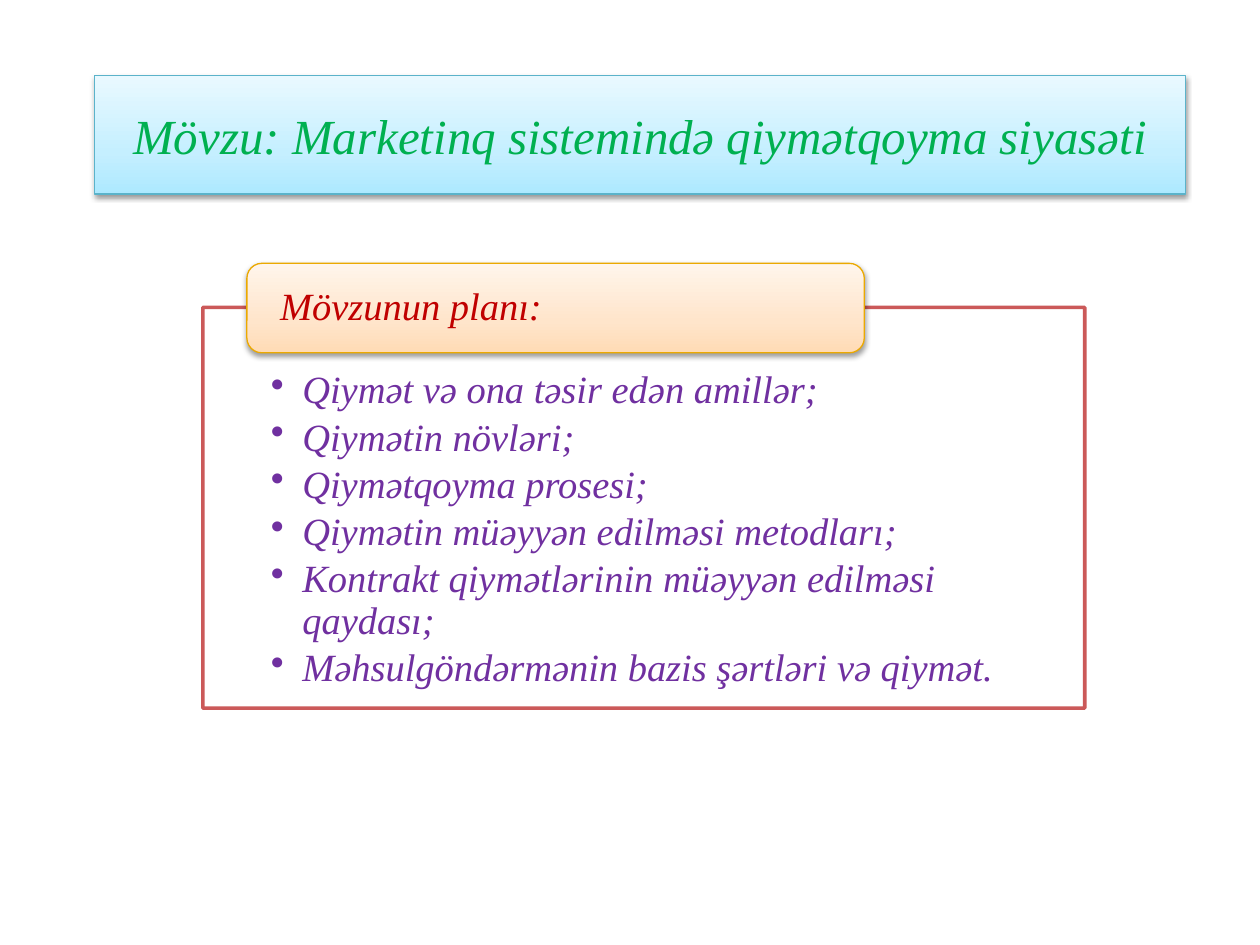
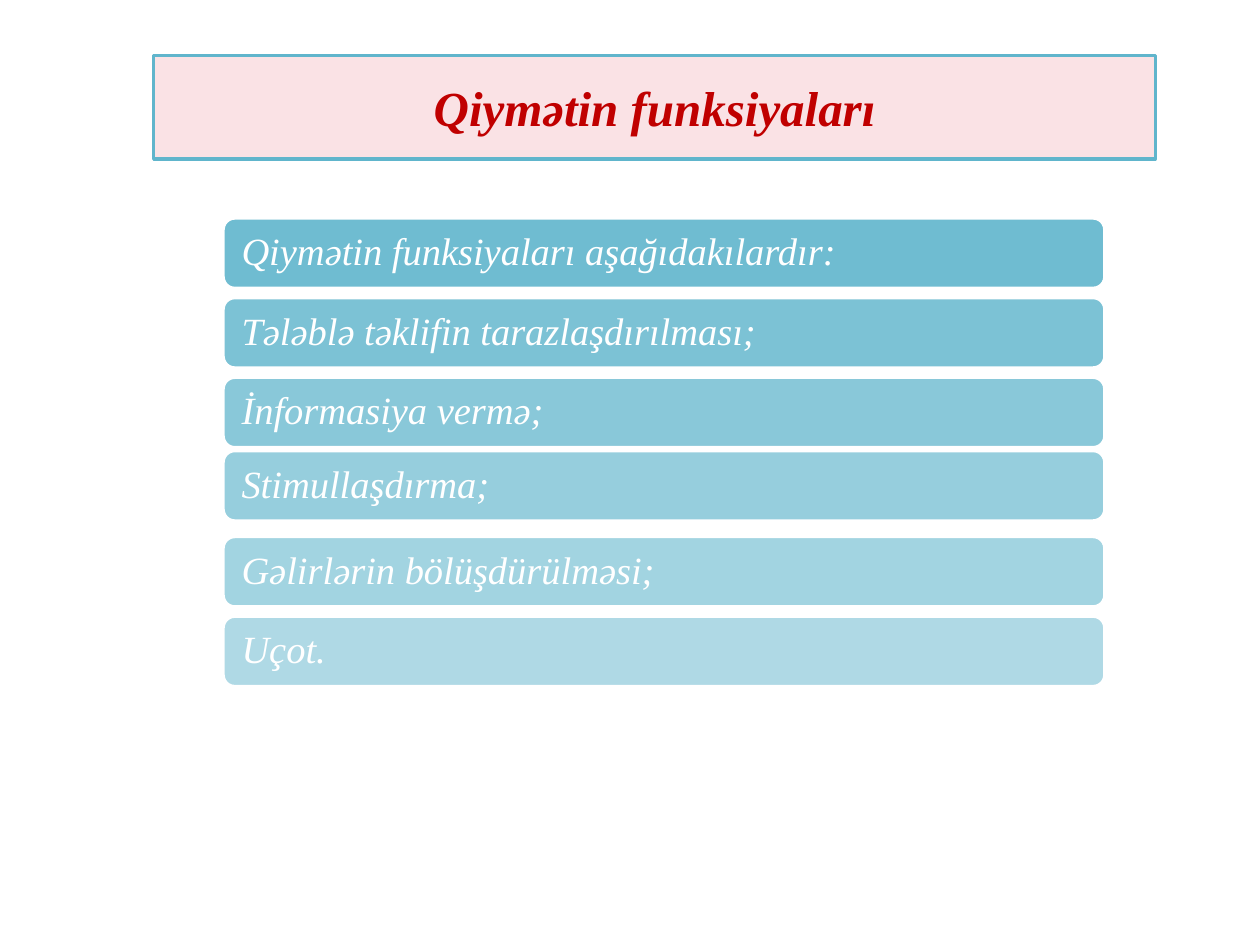
from copy import deepcopy

from lxml.etree import SubElement
from pptx import Presentation
from pptx.dml.color import RGBColor
from pptx.enum.shapes import MSO_SHAPE as Shape
from pptx.enum.text import MSO_ANCHOR as Anchor, MSO_AUTO_SIZE as AutoSize, PP_ALIGN as Align
from pptx.oxml.ns import qn
from pptx.util import Inches, Pt

FONT = "Times New Roman"
WHITE = "FFFFFF"
RED = "C00000"
GREEN = "00B050"
PURPLE = "7030A0"
TEAL = "60B5CC"
TITLE_SIZE = 28
BODY_SIZE = 22

PLAN = [
    "Qiymət və ona təsir edən amillər;",
    "Qiymətin növləri;",
    "Qiymətqoyma prosesi;",
    "Qiymətin müəyyən edilməsi metodları;",
    "Kontrakt qiymətlərinin müəyyən edilməsi qaydası;",
    "Məhsulgöndərmənin bazis şərtləri və qiymət.",
]
FUNCTIONS = [
    "Qiymətin funksiyaları aşağıdakılardır:",
    "Tələblə təklifin tarazlaşdırılması;",
    "İnformasiya vermə;",
    "Stimullaşdırma;",
    "Gəlirlərin bölüşdürülməsi;",
    "Uçot.",
]


def rgb(value):
    """Turn a hex string into a colour."""
    return RGBColor.from_string(value)


def set_line(shape, color, width):
    """Outline a shape."""
    shape.line.color.rgb = rgb(color)
    shape.line.width = Pt(width)


def set_solid(shape, color):
    """Fill a shape with one colour."""
    shape.fill.solid()
    shape.fill.fore_color.rgb = rgb(color)


def set_gradient(shape, bottom, middle, top):
    """Fill a shape with three colours rising from its bottom edge."""
    shape.fill.gradient()
    shape.fill.gradient_angle = 90
    stops = shape._element.spPr.find(".//" + qn("a:gsLst"))
    stops.insert(1, deepcopy(stops[0]))
    for stop, position, color in zip(shape.fill.gradient_stops, (0, 0.35, 1), (bottom, middle, top)):
        stop.position = position
        stop.color.rgb = rgb(color)


def set_opacity(fill_parent, percent):
    """Make the solid fill directly under an XML element translucent."""
    color = fill_parent.find(qn("a:solidFill")).find(qn("a:srgbClr"))
    SubElement(color, qn("a:alpha"), val=str(percent * 1000))


def add_shadow(shape):
    """Give a shape a soft shadow below it."""
    shape.shadow.inherit = False
    effects = shape._element.spPr.find(qn("a:effectLst"))
    shadow = SubElement(effects, qn("a:outerShdw"), blurRad=str(Pt(3.1)), dist=str(Pt(1.6)),
                        dir="5400000", rotWithShape="0")
    color = SubElement(shadow, qn("a:srgbClr"), val="000000")
    SubElement(color, qn("a:alpha"), val="38000")


def write(shape, lines, size, color, align=Align.LEFT, anchor=Anchor.MIDDLE, bold=False):
    """Write italic paragraphs into a shape."""
    frame = shape.text_frame
    frame.text = "\n".join(lines)
    frame.word_wrap = True
    frame.auto_size = AutoSize.NONE
    frame.vertical_anchor = anchor
    for paragraph in frame.paragraphs:
        paragraph.alignment = align
        for run in paragraph.runs:
            font = run.font
            font.name, font.size = FONT, Pt(size)
            font.italic, font.bold = True, bold
            font.color.rgb = rgb(color)


def set_insets(shape, side, top=0, bottom=0):
    """Set the inner margins of a shape."""
    frame = shape.text_frame
    frame.margin_left = frame.margin_right = Inches(side)
    frame.margin_top, frame.margin_bottom = Inches(top), Inches(bottom)


def add_bullets(shape):
    """Bullet the paragraphs of a shape and space them."""
    for paragraph in shape.text_frame.paragraphs:
        paragraph.line_spacing = 0.9
        paragraph.space_after = Pt(3.3)
        properties = paragraph._p.get_or_add_pPr()
        properties.set("marL", str(Inches(0.25)))
        properties.set("indent", str(-Inches(0.25)))
        SubElement(properties, qn("a:buChar"), char="•")


def add_box(slide, kind, left, top, width, height):
    """Add a preset shape without a shadow."""
    shape = slide.shapes.add_shape(kind, Inches(left), Inches(top), Inches(width), Inches(height))
    shape.shadow.inherit = False
    return shape


def add_titled_slide(presentation, text, color, left, top, width, height, bold=False):
    """Add a slide and place its title; return both."""
    slide = presentation.slides.add_slide(presentation.slide_layouts[5])
    title = slide.shapes.title
    title.left, title.top = Inches(left), Inches(top)
    title.width, title.height = Inches(width), Inches(height)
    write(title, [text], TITLE_SIZE, color, Align.CENTER, bold=bold)
    return slide, title


def add_plan(slide):
    """Add the framed plan with its heading tab."""
    frame = add_box(slide, Shape.RECTANGLE, 1.61, 2.44, 7, 3.18)
    set_solid(frame, WHITE)
    set_line(frame, "C64847", 2)
    properties = frame._element.spPr
    set_opacity(properties, 90)
    set_opacity(properties.find(qn("a:ln")), 90)
    write(frame, PLAN, BODY_SIZE, PURPLE, anchor=Anchor.TOP)
    set_insets(frame, 0.54, 0.5, 0.17)
    add_bullets(frame)

    heading = add_box(slide, Shape.ROUNDED_RECTANGLE, 1.96, 2.09, 4.9, 0.71)
    set_gradient(heading, "FFDBB5", "FFE5CB", "FFF5EB")
    set_line(heading, "EBA900", 0.75)
    add_shadow(heading)
    write(heading, ["Mövzunun planı:"], BODY_SIZE, RED)
    set_insets(heading, 0.23)
    heading.text_frame.paragraphs[0].line_spacing = 0.9


def add_function_bars(slide):
    """Stack the function bars, each paler than the one above."""
    first_top, last_top = 1.73, 4.89
    pitch = (last_top - first_top) / (len(FUNCTIONS) - 1)
    nudges = {3: -0.05}
    for index, text in enumerate(FUNCTIONS):
        top = first_top + index * pitch + nudges.get(index, 0)
        bar = add_box(slide, Shape.ROUNDED_RECTANGLE, 1.77, top, 7, 0.56)
        set_solid(bar, TEAL)
        set_opacity(bar._element.spPr, 90 - 8 * index)
        set_line(bar, WHITE, 2)
        write(bar, [text], BODY_SIZE, WHITE)
        set_insets(bar, 0.12)
        bar.text_frame.paragraphs[0].line_spacing = 0.9


def main():
    """Build the presentation."""
    presentation = Presentation()
    presentation.slide_width, presentation.slide_height = Inches(10), Inches(7.5)

    slide, title = add_titled_slide(presentation, "Mövzu: Marketinq sistemində qiymətqoyma siyasəti",
                                    GREEN, 0.75, 0.6, 8.66, 0.94)
    set_gradient(title, "ADE9FF", "C5EFFF", "E9F9FF")
    set_line(title, "5BB3CA", 0.75)
    add_shadow(title)
    add_plan(slide)

    slide, title = add_titled_slide(presentation, "Qiymətin funksiyaları",
                                    RED, 1.22, 0.44, 7.95, 0.82, bold=True)
    set_solid(title, "FAE2E5")
    set_line(title, TEAL, 2)
    add_function_bars(slide)

    presentation.save("out.pptx")


if __name__ == "__main__":
    main()
